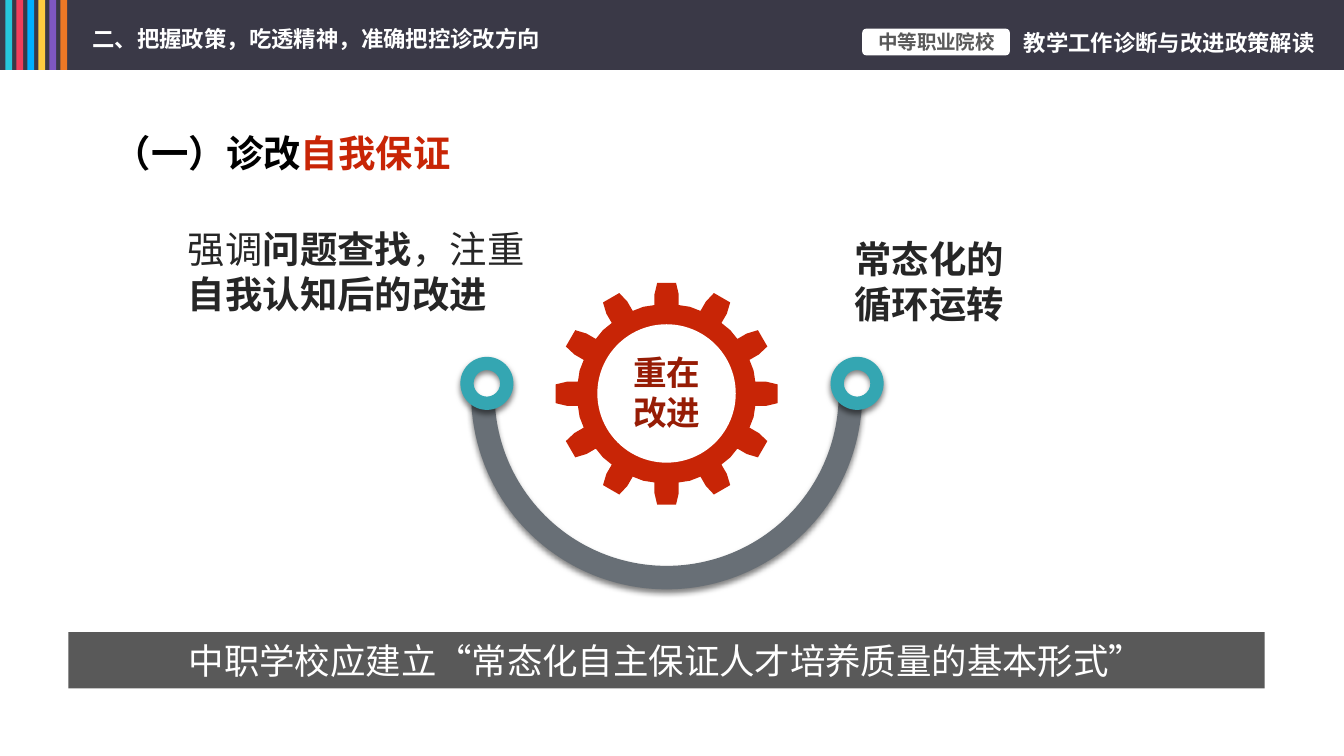
from dataclasses import dataclass
from math import cos, pi, sin

from lxml import etree
from pptx import Presentation
from pptx.dml.color import RGBColor
from pptx.enum.shapes import MSO_SHAPE
from pptx.enum.text import MSO_ANCHOR, MSO_AUTO_SIZE, PP_ALIGN
from pptx.oxml.ns import qn
from pptx.util import Emu, Inches, Pt

RECT, ROUND = MSO_SHAPE.RECTANGLE, MSO_SHAPE.ROUNDED_RECTANGLE
DONUT, ARC = MSO_SHAPE.DONUT, MSO_SHAPE.BLOCK_ARC
TOP, MIDDLE = MSO_ANCHOR.TOP, MSO_ANCHOR.MIDDLE
LEFT, CENTER, JUSTIFY = PP_ALIGN.LEFT, PP_ALIGN.CENTER, PP_ALIGN.JUSTIFY
FIT = MSO_AUTO_SIZE.SHAPE_TO_FIT_TEXT

FONT = "Noto Sans CJK SC"
WIDE = Inches(10)
HIGH = Emu(WIDE * 9 // 16)
CELL = WIDE / 100
WHITE, RED, GRAY, INK, TEAL = "FFFFFF", "C82506", "595959", "262626", "34A6B2"
STRIPES = ("26C6DA", "F23E5C", "00B0FF", "FFCD40", "7E57C1", "EC7825")
MID = (49.6, 29.3)
TEETH = 12
INSET = (1, 0.5, 1, 0.5)


@dataclass
class Run:
    """A stretch of text in one style."""
    text: str
    color: str
    bold: bool = True


@dataclass
class Box:
    """A preset shape; place is left, top, width, height in grid cells."""
    place: tuple
    fill: str
    kind: MSO_SHAPE = RECT
    adjust: tuple = ()
    turn: int = 0
    shade: bool = False


@dataclass
class Words:
    """Text with its layout; lines is a list of paragraphs of runs."""
    lines: list
    size: float
    align: PP_ALIGN = LEFT
    anchor: MSO_ANCHOR = TOP
    wrap: bool = True
    inset: tuple = INSET


def grid(*cells: float) -> list:
    """Turn grid cells into lengths."""
    return [Emu(round(cell * CELL)) for cell in cells]


def color(value: str) -> RGBColor:
    """Turn a hex string into a colour."""
    return RGBColor.from_string(value)


def paint(shape, fill: str) -> None:
    """Give a shape a plain fill with no line or shadow."""
    shape.shadow.inherit = False
    shape.fill.solid()
    shape.fill.fore_color.rgb = color(fill)
    shape.line.fill.background()


def shade(shape) -> None:
    """Cast a soft shadow straight down."""
    effects = shape.element.spPr.find(qn("a:effectLst"))
    outer = etree.SubElement(
        effects, qn("a:outerShdw"), blurRad=str(Pt(3)), dist=str(Pt(2)),
        dir="5400000", algn="ctr", rotWithShape="0")
    tint = etree.SubElement(outer, qn("a:srgbClr"), val="000000")
    etree.SubElement(tint, qn("a:alpha"), val="50000")


def draw(shapes, box: Box):
    """Draw one preset shape."""
    shape = shapes.add_shape(box.kind, *grid(*box.place))
    paint(shape, box.fill)
    for index, value in enumerate(box.adjust):
        shape.adjustments[index] = value
    shape.rotation = box.turn
    if box.shade:
        shade(shape)
    return shape


def write(shape, words: Words) -> None:
    """Fill a shape with styled text."""
    frame = shape.text_frame
    left, top, right, bottom = grid(*words.inset)
    format = {
        "margin_left": left, "margin_top": top, "margin_right": right,
        "margin_bottom": bottom, "word_wrap": words.wrap,
        "vertical_anchor": words.anchor, "auto_size": FIT,
    }
    for name, value in format.items():
        setattr(frame, name, value)
    for index, line in enumerate(words.lines):
        para = frame.add_paragraph() if index else frame.paragraphs[0]
        para.alignment = words.align
        for part in line:
            run = para.add_run()
            run.text = part.text
            style = {"size": Pt(words.size), "bold": part.bold, "name": FONT}
            for name, value in style.items():
                setattr(run.font, name, value)
            run.font.color.rgb = color(part.color)
            etree.SubElement(run.font._element, qn("a:ea"), typeface=FONT)


def label(shapes, place: tuple, words: Words) -> None:
    """Add a text box."""
    write(shapes.add_textbox(*grid(*place)), words)


def spin(x: float, y: float, angle: float) -> tuple:
    """Turn a point about the hub of the gear."""
    return tuple(grid(MID[0] + x * cos(angle) - y * sin(angle),
                      MID[1] + x * sin(angle) + y * cos(angle)))


def gear(shapes) -> None:
    """Draw the toothed wheel with its hub hole."""
    step = 2 * pi / TEETH
    tooth = [(6.6, -0.9), (7.4, -0.9), (8.25, -0.7),
             (8.25, 0.7), (7.4, 0.9), (6.6, 0.9)]
    tooth.append((6.7 * cos(step / 2), 6.7 * sin(step / 2)))
    rim = [spin(x, y, n * step) for n in range(TEETH) for x, y in tooth]
    hole = [spin(1, 0, -n * step / 2) for n in range(2 * TEETH)]
    pen = shapes.build_freeform(*rim[0], scale=1.0)
    pen.add_line_segments(rim[1:], close=True)
    pen.move_to(*hole[0])
    pen.add_line_segments(hole[1:], close=True)
    paint(pen.convert_to_shape(), RED)


def header(shapes) -> None:
    """Draw the top band with its stripes and titles."""
    draw(shapes, Box((0, 0, 100, 5.2), "3A3947"))
    for index, fill in enumerate(STRIPES):
        draw(shapes, Box((0.4 + 0.82 * index, 0, 0.5, 5.2), fill))
    label(shapes, (5.9, 1.4, 35.7, 3), Words(
        [[Run("二、把握政策，吃透精神，准确把控诊改方向", WHITE)]],
        12, anchor=MIDDLE, wrap=False))
    badge = draw(shapes, Box((64.15, 2.13, 11, 2), WHITE, ROUND))
    write(badge, Words([[Run("中等职业院校", GRAY)]], 10.5, JUSTIFY, MIDDLE,
                       inset=(1.1, 0, 0.4, 0)))
    label(shapes, (76.05, 2.15, 21.9, 2), Words(
        [[Run("教学工作诊断与改进政策解读", WHITE)]],
        12, CENTER, MIDDLE, False, (0, 0, 0, 0)))


def body(shapes) -> None:
    """Draw the gear, the arc and the text around them."""
    label(shapes, (7.35, 9.2, 27.3, 4.4), Words(
        [[Run("（一）诊改", "000000"), Run("自我保证", RED)]],
        20, CENTER, wrap=False))
    wheel = shapes.add_group_shape().shapes
    gear(wheel)
    draw(wheel, Box((44.45, 24.13, 10.3, 10.3), WHITE, DONUT, (0.28,)))
    core = draw(shapes, Box((46.05, 25.75, 7.1, 6.8), WHITE))
    write(core, Words([[Run("重在改进", "961C05")]], 18, CENTER,
                      inset=(0.7, 0.4, 0.7, 0.4)))
    draw(shapes, Box((35.05, 14.75, 29.1, 29.1), "686F76", ARC,
                     (109.38, 214.4, 0.06), 180, True))
    for left in (61.8, 34.25):
        draw(shapes, Box((left, 26.55, 3.95, 3.95), TEAL, DONUT, shade=True))
    label(shapes, (13, 16.35, 27.6, 7.7), Words(
        [[Run("强调", INK, False), Run("问题查找", INK),
          Run("，注重", INK, False), Run("自我认知后的改进", INK)]], 20))
    label(shapes, (62.6, 17.1, 25.2, 7.7), Words(
        [[Run("常态化的", INK)], [Run("循环运转", INK)]], 20))
    bar = draw(shapes, Box((5.1, 47.03, 89, 4.2), GRAY))
    write(bar, Words(
        [[Run("中职学校应建立“常态化自主保证人才培养质量的基本形式”", WHITE, False)]],
        19, CENTER))


def main() -> None:
    """Build and save the slide."""
    deck = Presentation()
    deck.slide_width, deck.slide_height = WIDE, HIGH
    shapes = deck.slides.add_slide(deck.slide_layouts[6]).shapes
    header(shapes)
    body(shapes)
    deck.save("out.pptx")


if __name__ == "__main__":
    main()
